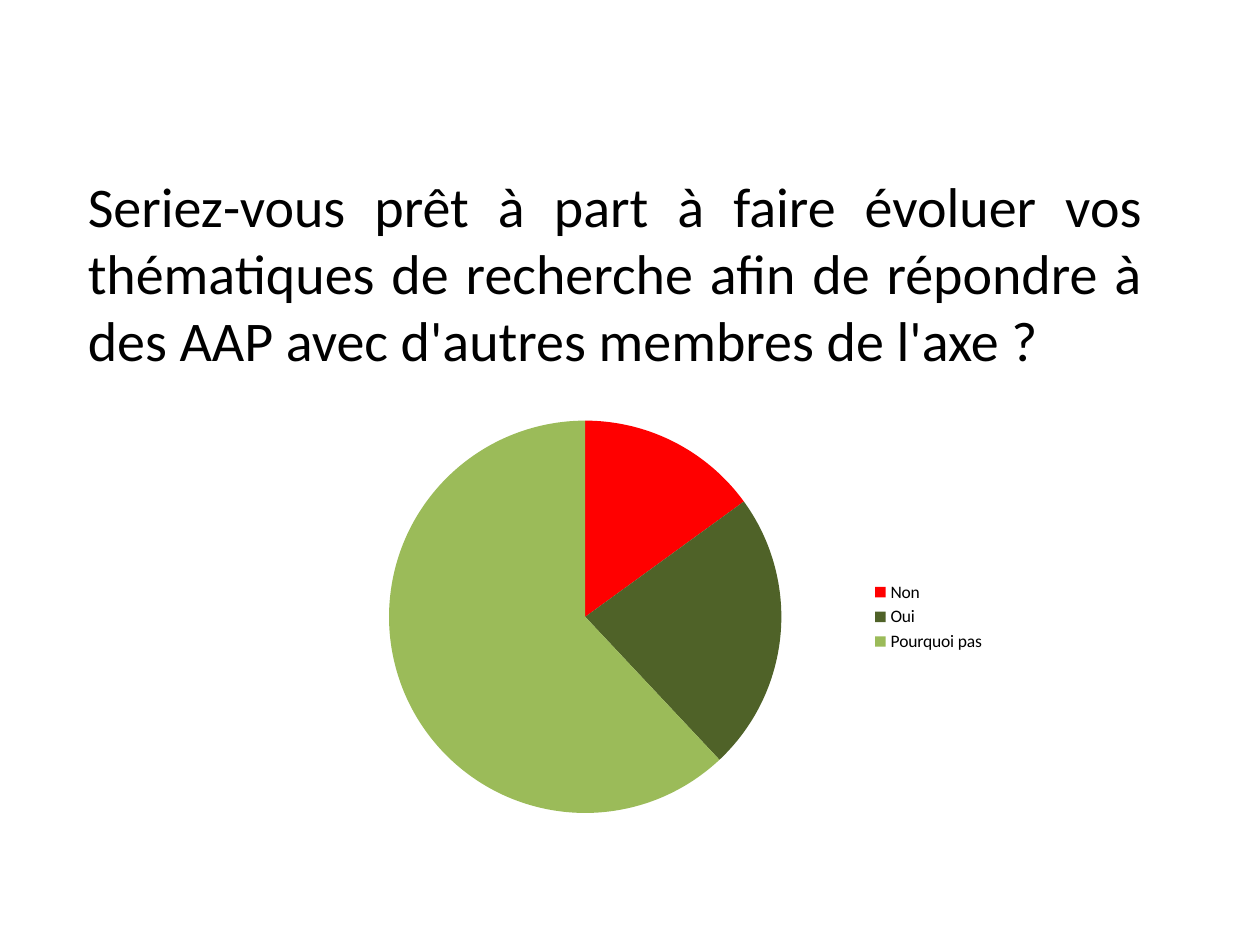
import pptx
import pptx.chart.data
import pptx.dml.color
import pptx.enum.chart
import pptx.enum.text
import pptx.util
from pptx.util import Cm


def rgb(value):
    return pptx.dml.color.RGBColor.from_string(value)


class SlideBuilder:
    font = "Calibri"
    ink = "000000"

    def __init__(self, prs):
        self.s = prs.slides.add_slide(prs.slide_layouts[6])

    def style(self, font, size):
        font.name = self.font
        font.size = pptx.util.Pt(size)
        font.color.rgb = rgb(self.ink)

    def question(self, text, left, top, width, height):
        tf = self.s.shapes.add_textbox(Cm(left), Cm(top), Cm(width), Cm(height)).text_frame
        tf.word_wrap = True
        tf.auto_size = pptx.enum.text.MSO_AUTO_SIZE.SHAPE_TO_FIT_TEXT
        p = tf.paragraphs[0]
        p.text = text
        p.alignment = pptx.enum.text.PP_ALIGN.JUSTIFY
        self.style(p.font, 32)

    def pie(self, answers, left, top, width, height):
        """Draw a pie from (label, percentage, colour) answers."""
        labels, values, colours = zip(*answers)
        data = pptx.chart.data.CategoryChartData()
        data.categories = labels
        data.add_series("Series 1", values)
        chart = self.s.shapes.add_chart(
            pptx.enum.chart.XL_CHART_TYPE.PIE,
            Cm(left), Cm(top), Cm(width), Cm(height), data).chart
        self.style(chart.font, 10)
        chart.has_title = False
        chart.has_legend = True
        chart.legend.position = pptx.enum.chart.XL_LEGEND_POSITION.RIGHT
        chart.legend.include_in_layout = False
        plot = chart.plots[0]
        plot.vary_by_categories = True
        for i, colour in enumerate(colours):
            fill = plot.series[0].points[i].format.fill
            fill.solid()
            fill.fore_color.rgb = rgb(colour)


def main():
    prs = pptx.Presentation()
    prs.slide_width, prs.slide_height = Cm(25.4), Cm(19.05)
    slide = SlideBuilder(prs)
    slide.question(
        "Seriez-vous prêt à part à faire évoluer vos thématiques de recherche "
        "afin de répondre à des AAP avec d'autres membres de l'axe ?",
        1.52, 3.33, 21.77, 4.37)
    slide.pie([("Non", 15, "FF0000"),
               ("Oui", 23, "4F6228"),
               ("Pourquoi pas", 62, "9BBB59")],
              6.07, 8.13, 14.05, 8.61)
    prs.save("out.pptx")


if __name__ == "__main__":
    main()
